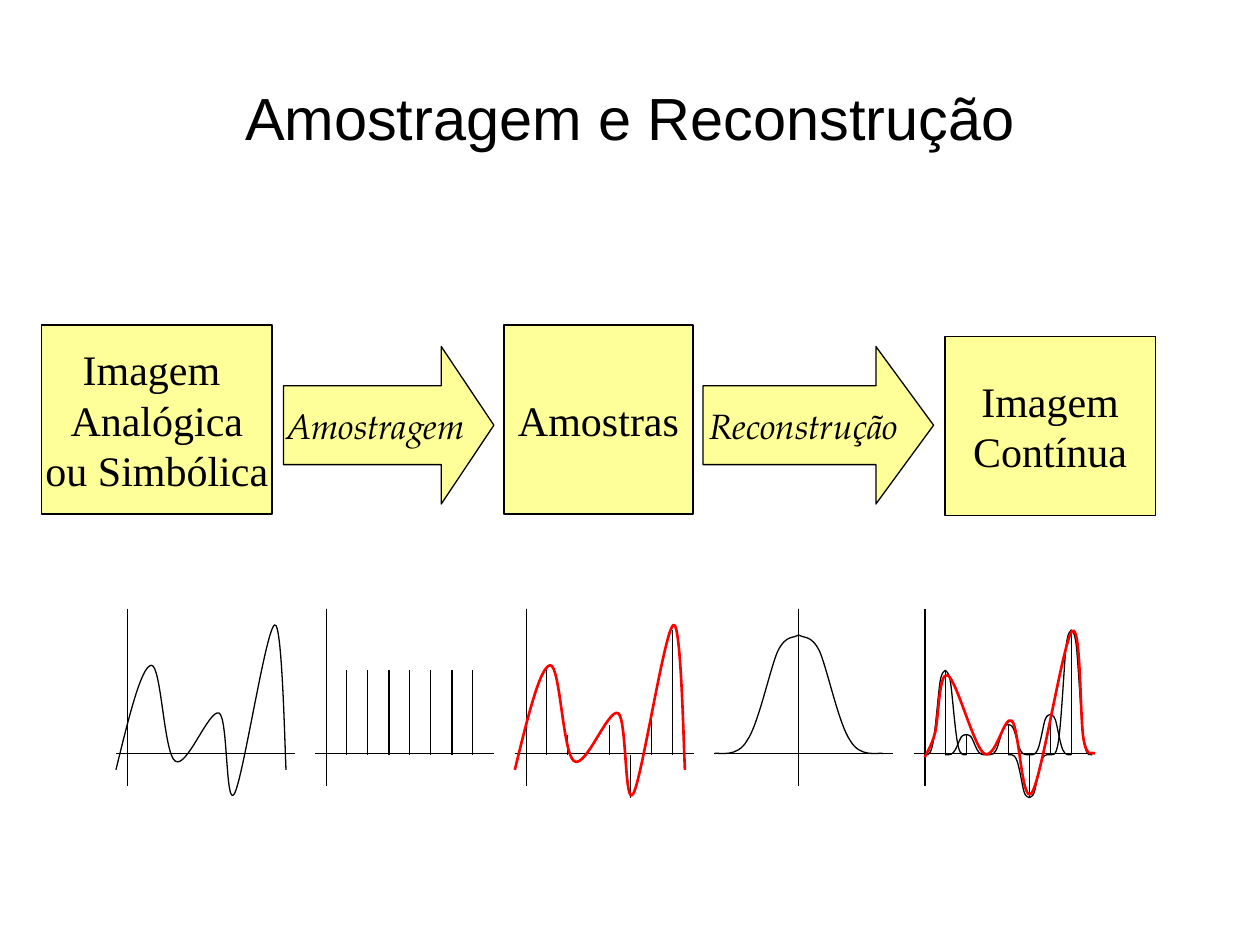
from pptx import Presentation
from pptx.dml.color import RGBColor
from pptx.enum.shapes import MSO_CONNECTOR, MSO_SHAPE
from pptx.enum.text import MSO_ANCHOR, PP_ALIGN
from pptx.oxml.ns import qn
from pptx.util import Inches, Pt

RECTANGLE, ARROW = MSO_SHAPE.RECTANGLE, MSO_SHAPE.RIGHT_ARROW
STRAIGHT = MSO_CONNECTOR.STRAIGHT
MIDDLE, CENTER = MSO_ANCHOR.MIDDLE, PP_ALIGN.CENTER

COLORS = {"ink": "000000", "box": "FFFF99", "signal": "FF0000"}
PITCH = 1 / 6
BASELINE, SAMPLE_BASE, COMB_TOP = 5.98, 5.99, 5.32
PANELS = [0.92 + index * 1.583 for index in range(5)]

BLOCKS = [
    (RECTANGLE, 0.33, 2.58, 1.83, 1.5, "Imagem \nAnalógica\nou Simbólica"),
    (RECTANGLE, 4, 2.58, 1.5, 1.5, "Amostras"),
    (RECTANGLE, 7.5, 2.67, 1.67, 1.42, "Imagem\nContínua"),
]
ARROWS = [
    (ARROW, 2.25, 2.75, 1.67, 1.25, "Amostragem"),
    (ARROW, 5.58, 2.75, 1.83, 1.25, "Reconstrução"),
]
SAMPLES = {0: 5.32, 1: 5.83, 3: 5.75, 4: 6.33, 5: 5.67, 6: 5}

SIGNAL = [
    (0, 6.11), (0.1, 5.7), (0.2, 5.29), (0.28, 5.28), (0.36, 5.27),
    (0.38, 5.98), (0.47, 6.04), (0.56, 6.11), (0.74, 5.62), (0.82, 5.66),
    (0.89, 5.7), (0.87, 6.42), (0.94, 6.3), (1.01, 6.18), (1.19, 4.99),
    (1.26, 4.96), (1.32, 4.93), (1.34, 5.92), (1.35, 6.11),
]
RECONSTRUCTED = [
    (7.34, 6.01), (7.35, 5.98), (7.39, 5.93), (7.42, 5.82), (7.45, 5.71),
    (7.45, 5.33), (7.52, 5.36), (7.59, 5.39), (7.73, 5.93), (7.81, 5.98),
    (7.9, 6.04), (7.97, 5.67), (8.03, 5.72), (8.09, 5.77), (8.11, 6.41),
    (8.19, 6.29), (8.27, 6.17), (8.44, 5.07), (8.51, 5.01), (8.58, 4.94),
    (8.57, 5.71), (8.6, 5.87), (8.63, 6.03), (8.67, 5.96), (8.69, 5.98),
]
HALF_BELL = [
    (-1, 0), (-0.94, 0.01), (-0.73, -0.04), (-0.61, 0.11), (-0.48, 0.24),
    (-0.34, 0.71), (-0.25, 0.86), (-0.15, 1.01), (-0.05, 0.97), (0, 1),
]
BELL = HALF_BELL + [(-x, y) for x, y in HALF_BELL[-2::-1]]


def write_text(shape, text, font="Times New Roman", size=24, italic=False, wrap=False):
    frame = shape.text_frame
    frame.word_wrap = wrap
    frame.vertical_anchor = MIDDLE
    paragraph = frame.paragraphs[0]
    paragraph.text = text
    paragraph.alignment = CENTER
    for run in paragraph.runs:
        run.font.name = font
        run.font.size = Pt(size)
        run.font.italic = italic
        run.font.color.rgb = RGBColor.from_string(COLORS["ink"])


def bend_segments(shape):
    segments = list(shape._element.iter(qn("a:lnTo")))
    for start in range(0, len(segments), 3):
        first = segments[start]
        bezier = first.makeelement(qn("a:cubicBezTo"), {})
        first.addprevious(bezier)
        for segment in segments[start:start + 3]:
            bezier.append(segment[0])
            segment.getparent().remove(segment)


class Diagram:
    """Draws styled elements on the current slide."""

    def __init__(self, slide):
        self.shapes = slide.shapes

    def stroke(self, shape, color="ink", width=0.75):
        shape.line.color.rgb = RGBColor.from_string(COLORS[color])
        shape.line.width = Pt(width)

    def title(self, text):
        box = self.shapes.add_textbox(Inches(0.5), Inches(0.3), Inches(9), Inches(1.25))
        write_text(box, text, font="Arial", size=34, wrap=True)

    def block(self, kind, left, top, width, height, text, **text_format):
        shape = self.shapes.add_shape(
            kind, Inches(left), Inches(top), Inches(width), Inches(height))
        if kind == ARROW:
            shape.adjustments[1] = width / 5
        shape.shadow.inherit = False
        shape.fill.solid()
        shape.fill.fore_color.rgb = RGBColor.from_string(COLORS["box"])
        self.stroke(shape)
        write_text(shape, text, **text_format)

    def line(self, x1, y1, x2, y2):
        line = self.shapes.add_connector(
            STRAIGHT, Inches(x1), Inches(y1), Inches(x2), Inches(y2))
        self.stroke(line)
        properties = line._element.spPr
        properties.append(properties.makeelement(qn("a:effectLst"), {}))

    def curve(self, controls, color="ink", width=0.75):
        first, *rest = [(Inches(x), Inches(y)) for x, y in controls]
        builder = self.shapes.build_freeform(*first)
        builder.add_line_segments(rest, close=False)
        shape = builder.convert_to_shape()
        bend_segments(shape)
        shape.shadow.inherit = False
        shape.fill.background()
        self.stroke(shape, color, width)

    def axes(self, left, origin=0.09):
        self.line(left + origin, 4.83, left + origin, 6.24)
        self.line(left, BASELINE, left + 1.42, BASELINE)

    def samples(self, left, tops):
        for index, top in tops.items():
            x = left + 0.25 + index * PITCH
            self.line(x, SAMPLE_BASE, x, top)

    def bell(self, center, base, peak, half_width):
        self.curve([
            (center + half_width * x, base + (peak - base) * y) for x, y in BELL
        ])


def main():
    presentation = Presentation()
    presentation.slide_width, presentation.slide_height = Inches(10), Inches(7.5)
    diagram = Diagram(presentation.slides.add_slide(presentation.slide_layouts[6]))

    diagram.title("Amostragem e Reconstrução")
    for block in BLOCKS:
        diagram.block(*block)
    for arrow in ARROWS:
        diagram.block(*arrow, font="TeX Gyre Pagella", size=20, italic=True)

    analog, comb, sampled, kernel, rebuilt = PANELS
    for left in (analog, comb, sampled, rebuilt):
        diagram.axes(left)
    diagram.axes(kernel, origin=0.67)

    diagram.curve([(analog + x, y) for x, y in SIGNAL])
    diagram.samples(comb, dict.fromkeys(range(7), COMB_TOP))
    diagram.samples(sampled, SAMPLES)
    diagram.curve([(sampled + x, y) for x, y in SIGNAL], "signal", 1.5)
    diagram.bell(kernel + 0.67, BASELINE, 5.04, 0.67)
    diagram.samples(rebuilt, SAMPLES)
    for index, peak in SAMPLES.items():
        diagram.bell(rebuilt + 0.25 + index * PITCH, SAMPLE_BASE, peak, PITCH)
    diagram.curve(RECONSTRUCTED, "signal", 1.5)

    presentation.save("out.pptx")


if __name__ == "__main__":
    main()
